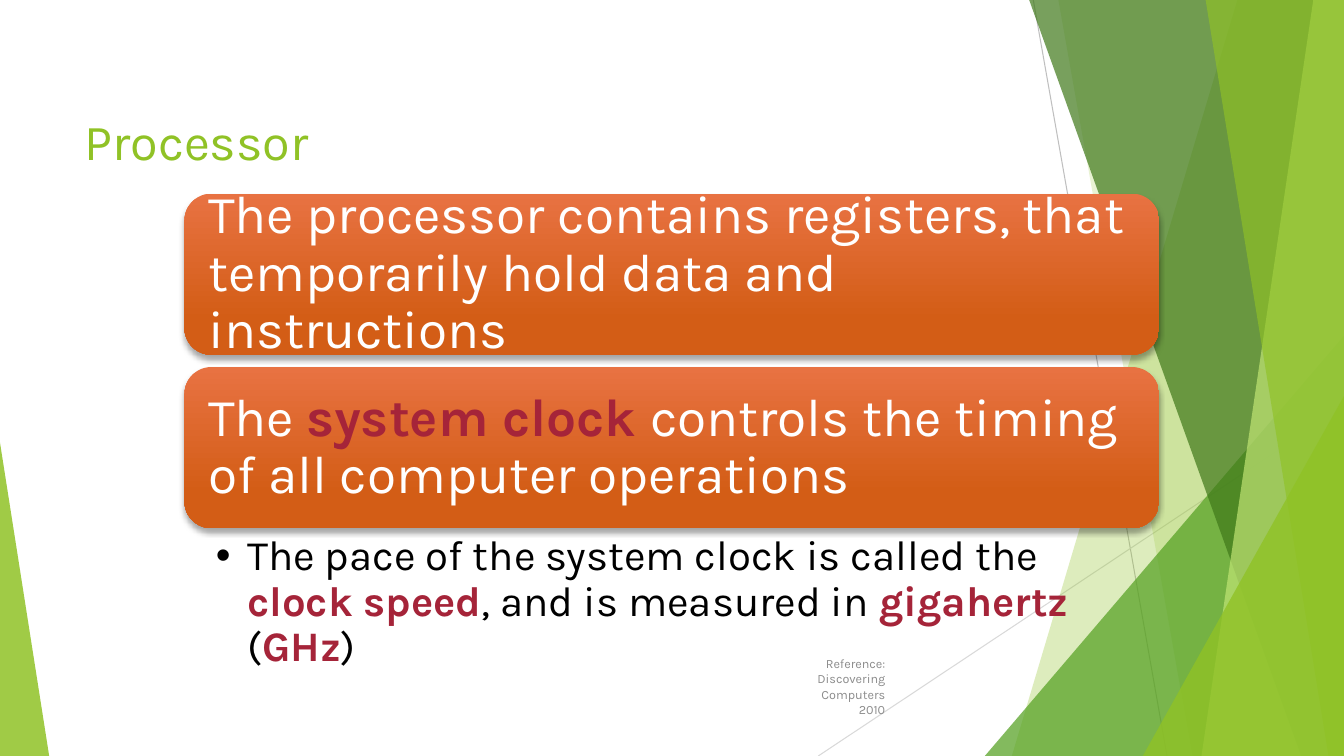
from lxml.etree import SubElement
from pptx import Presentation
from pptx.dml.color import RGBColor
from pptx.enum.shapes import MSO_CONNECTOR as CONN, MSO_SHAPE as SHAPE
from pptx.enum.text import MSO_ANCHOR as ANCHOR, MSO_AUTO_SIZE as AUTO, PP_ALIGN as ALIGN
from pptx.oxml import parse_xml
from pptx.oxml.ns import nsdecls, qn
from pptx.util import Cm, Pt

WIDTH, HEIGHT = 33.87, 19.05
LIME = RGBColor(0x90, 0xC2, 0x26)
PALE_LIME = RGBColor(0xC0, 0xE4, 0x74)
GREEN = RGBColor(0x54, 0xA0, 0x21)
DARK_GREEN = RGBColor(0x3F, 0x78, 0x19)
ORANGE = RGBColor(0xE8, 0x72, 0x42)
DEEP_ORANGE = RGBColor(0xD3, 0x5D, 0x16)
CRIMSON = RGBColor(0xA5, 0x24, 0x39)
GRAY = RGBColor(0x8C, 0x8C, 0x8C)
LINE_GRAY = RGBColor(0xBF, 0xBF, 0xBF)
LIGHT_GRAY = RGBColor(0xD9, 0xD9, 0xD9)
WHITE = RGBColor(0xFF, 0xFF, 0xFF)
BLACK = RGBColor(0, 0, 0)


class Deck:
    """Hold the font and the current slide, and draw each kind of element."""

    font = "Karla"

    def __init__(self):
        self.prs = Presentation()
        self.prs.slide_width, self.prs.slide_height = Cm(WIDTH), Cm(HEIGHT)
        self.s = self.prs.slides.add_slide(self.prs.slide_layouts[6])

    def line(self, x1, y1, x2, y2, color):
        c = self.s.shapes.add_connector(CONN.STRAIGHT, Cm(x1), Cm(y1), Cm(x2), Cm(y2))
        c.line.color.rgb, c.line.width = color, Pt(0.75)
        SubElement(c._element.spPr, qn("a:effectLst"))

    def tint(self, sp, color, alpha):
        sp.shadow.inherit = False
        sp.fill.solid()
        sp.fill.fore_color.rgb = color
        sp.line.fill.background()
        clr = sp._element.spPr.find(qn("a:solidFill"))[0]
        SubElement(clr, qn("a:alpha"), val=str(alpha * 1000))

    def facet(self, top_x, bottom_x, color, alpha):
        top = Cm(-0.02)
        fb = self.s.shapes.build_freeform(Cm(top_x), top)
        fb.add_line_segments([(Cm(WIDTH), top), (Cm(WIDTH), Cm(HEIGHT)), (Cm(bottom_x), Cm(HEIGHT))])
        self.tint(fb.convert_to_shape(), color, alpha)

    def triangle(self, x, y, w, apex, color, alpha):
        sp = self.s.shapes.add_shape(SHAPE.ISOSCELES_TRIANGLE, Cm(x), Cm(y), Cm(w), Cm(HEIGHT - y))
        sp.adjustments[0] = apex
        self.tint(sp, color, alpha)

    def add_runs(self, sp, runs, size, anchor=ANCHOR.MIDDLE, align=ALIGN.LEFT, insets=(0.25, 0.13, 0.25, 0.13)):
        tf = sp.text_frame
        tf.word_wrap, tf.auto_size, tf.vertical_anchor = True, AUTO.NONE, anchor
        tf.margin_left, tf.margin_top, tf.margin_right, tf.margin_bottom = map(Cm, insets)
        p = tf.paragraphs[0]
        p.alignment = align
        for text, color, bold in runs:
            r = p.add_run()
            r.text = text
            r.font.name, r.font.size, r.font.bold = self.font, Pt(size), bold
            r.font.color.rgb = color
        return p

    def text(self, x, y, w, h, runs, size, **style):
        return self.add_runs(self.s.shapes.add_textbox(Cm(x), Cm(y), Cm(w), Cm(h)), runs, size, **style)

    def bullet(self, x, y, w, h, runs, size):
        p = self.text(x, y, w, h, runs, size, anchor=ANCHOR.TOP, insets=(0.79, 0.13, 0.76, 0.13))
        p.line_spacing = 0.9
        pPr = p._p.get_or_add_pPr()
        pPr.set("marL", str(Cm(0.79)))
        pPr.set("indent", str(Cm(-0.79)))
        SubElement(pPr, qn("a:buFont"), typeface="Arial")
        SubElement(pPr, qn("a:buChar"), char="•")

    def card(self, x, y, w, h, runs, size):
        sp = self.s.shapes.add_shape(SHAPE.ROUNDED_RECTANGLE, Cm(x), Cm(y), Cm(w), Cm(h))
        sp.line.fill.background()
        sp.fill.gradient()
        sp.fill.gradient_angle = 270
        for stop, (pos, color) in zip(sp.fill.gradient_stops, ((0, ORANGE), (0.78, DEEP_ORANGE))):
            stop.position, stop.color.rgb = pos, color
        sp._element.spPr.append(parse_xml(
            f'<a:effectLst {nsdecls("a")}><a:outerShdw blurRad="{Pt(4)}" dist="{Pt(3)}" dir="5400000" '
            'rotWithShape="0"><a:srgbClr val="000000"><a:alpha val="35000"/></a:srgbClr>'
            '</a:outerShdw></a:effectLst>'))
        self.add_runs(sp, runs, size, insets=(0.4,) * 4).line_spacing = 0.9


def main():
    d = Deck()
    d.line(26.04, 0, 29.41, HEIGHT, LINE_GRAY)
    d.line(WIDTH, 10.24, 20.62, HEIGHT, LIGHT_GRAY)
    d.facet(31.19, 25.5, LIME, 30)
    d.facet(26.67, 30.05, LIME, 20)
    d.triangle(24.82, 8.46, 9.05, 1, GREEN, 72)
    d.facet(25.93, 32.79, DARK_GREEN, 70)
    d.facet(33.1, 30.28, PALE_LIME, 70)
    d.facet(30.38, 33.48, LIME, 65)
    d.triangle(28.8, 9.98, 5.07, 1, LIME, 80)
    d.triangle(0, 11.15, 1.24, 0, LIME, 85)

    d.text(20.02, 16.79, 2.54, 1.02, [("Reference: Discovering Computers 2010", GRAY, False)], 9, align=ALIGN.RIGHT)
    d.text(1.88, 1.7, 23.88, 3.66, [("Processor", LIME, False)], 36)

    cards = [
        [("The processor contains registers, that temporarily hold data and instructions", WHITE, False)],
        [("The ", WHITE, False), ("system clock ", CRIMSON, True),
         ("controls the timing of all computer operations", WHITE, False)],
    ]
    for i, runs in enumerate(cards):
        d.card(4.65, 4.88 + i * 4.37, 24.56, 4.06, runs, 38)

    d.bullet(4.65, 13.34, 24.56, 3.61, [
        ("The pace of the system clock is called the ", BLACK, False),
        ("clock speed", CRIMSON, True),
        (", and is measured in ", BLACK, False),
        ("gigahertz", CRIMSON, True),
        (" (", BLACK, False),
        ("GHz", CRIMSON, True),
        (")", BLACK, False),
    ], 30)
    d.prs.save("out.pptx")


if __name__ == "__main__":
    main()
